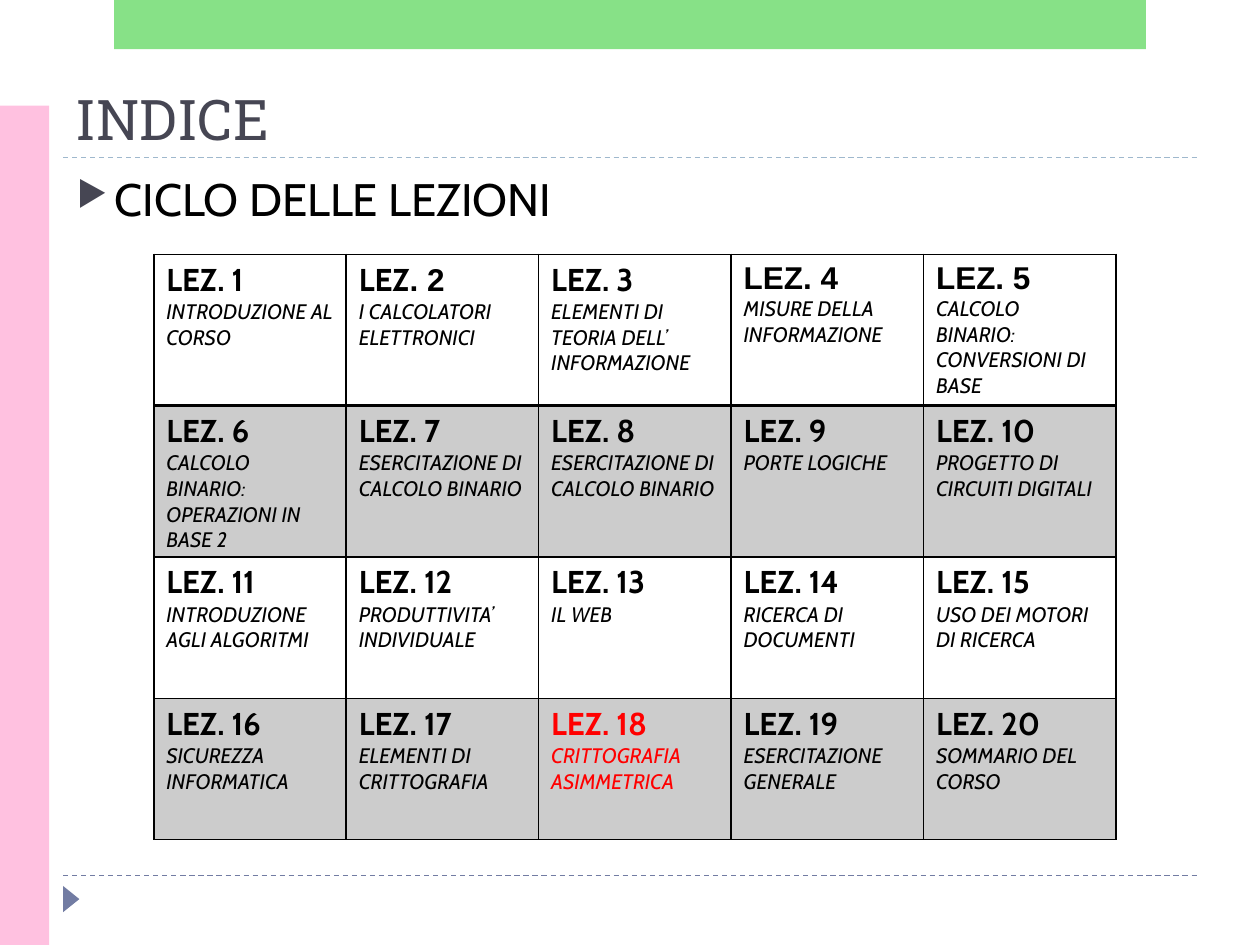
from lxml import etree
from pptx import Presentation
from pptx.dml.color import RGBColor
from pptx.enum import dml, shapes, text
from pptx.oxml import ns
from pptx.util import Cm, Pt

HUES = {
    "green": "62D862", "pink": "FFC1E0", "slate": "727CA3", "mist": "9FB8CD",
    "ink": "464653", "black": "000000", "red": "FF0000",
}
BODY, HEAD, PLAIN = "Cabin", "Roboto Slab", "Arial"
COLS, NOW = 5, 18
TOPICS = [
    "INTRODUZIONE AL CORSO",
    "I CALCOLATORI \vELETTRONICI",
    "ELEMENTI DI TEORIA DELL’\vINFORMAZIONE",
    "MISURE DELLA INFORMAZIONE",
    "CALCOLO BINARIO: CONVERSIONI DI BASE",
    "CALCOLO BINARIO: OPERAZIONI IN BASE 2",
    "ESERCITAZIONE DI CALCOLO BINARIO",
    "ESERCITAZIONE DI CALCOLO BINARIO",
    "PORTE LOGICHE",
    "PROGETTO DI CIRCUITI DIGITALI",
    "INTRODUZIONE AGLI ALGORITMI",
    "PRODUTTIVITA’ INDIVIDUALE",
    "IL WEB",
    "RICERCA DI DOCUMENTI",
    "USO DEI MOTORI DI RICERCA",
    "SICUREZZA INFORMATICA",
    "ELEMENTI DI CRITTOGRAFIA",
    "CRITTOGRAFIA ASIMMETRICA",
    "ESERCITAZIONE GENERALE",
    "SOMMARIO DEL CORSO",
]


def rgb(hue):
    return RGBColor.from_string(HUES[hue])


def add(node, tag, **attrs):
    return etree.SubElement(node, ns.qn(tag), attrs)


def paint(fill, props, hue, alpha=100):
    """Fill solidly; props is the XML element that holds the fill."""
    fill.solid()
    fill.fore_color.rgb = rgb(hue)
    if alpha < 100:
        tint = props.find(ns.qn("a:solidFill"))[0]
        add(tint, "a:alpha", val=str(alpha * 1000))


def style(para, size, face, hue, bold=False, slant=False):
    font = para.font
    font.size, font.name = Pt(size), face
    font.bold, font.italic = bold, slant
    font.color.rgb = rgb(hue)


def block(slide, kind, box, hue, alpha=100):
    shape = slide.shapes.add_shape(kind, *map(Cm, box))
    shape.shadow.inherit = False
    shape.line.fill.background()
    paint(shape.fill, shape._element.spPr, hue, alpha)
    return shape


def rule(slide, left, top, width, hue):
    line = slide.shapes.add_connector(
        shapes.MSO_CONNECTOR.STRAIGHT, Cm(left), Cm(top), Cm(left + width), Cm(top))
    line.line.color.rgb = rgb(hue)
    line.line.width = Pt(0.75)
    line.line.dash_style = dml.MSO_LINE.DASH
    add(line._element.spPr, "a:effectLst")


def frame(slide, left, top, width, height):
    """Colour bars, dashed rules and page marker within the slide box."""
    bar = shapes.MSO_SHAPE.RECTANGLE
    rule(slide, left + 1.27, top + height - 1.4, width - 2.54, "slate")
    rule(slide, left + 1.27, top + 3.18, width - 2.54, "mist")
    mark = block(slide, shapes.MSO_SHAPE.ISOSCELES_TRIANGLE,
                 (left + 1.17, top + height - 1.09, 0.53, 0.33), "slate")
    mark.rotation = 90
    block(slide, bar, (left, top + 2.13, 0.99, height - 2.13), "pink")
    block(slide, bar, (left + 2.3, top, 20.8, 0.99), "green", 76)


def title(slide, left, top, width, height):
    head = slide.shapes.title
    head.left, head.top, head.width, head.height = map(Cm, (left, top, width, height))
    body = head.text_frame
    body.text = "INDICE"
    body.vertical_anchor = text.MSO_ANCHOR.BOTTOM
    para = body.paragraphs[0]
    para.alignment = text.PP_ALIGN.LEFT
    style(para, 32, HEAD, "ink")


def topic(slide, left, top, width, height):
    body = slide.shapes.add_textbox(*map(Cm, (left, top, width, height))).text_frame
    body.word_wrap = True
    para = body.paragraphs[0]
    para.text = "CICLO DELLE LEZIONI"
    props = para._p.get_or_add_pPr()
    props.set("marL", str(Cm(0.76)))
    props.set("indent", str(-Cm(0.76)))
    add(add(props, "a:buClr"), "a:srgbClr", val=HUES["ink"])
    add(props, "a:buSzPct", val="76000")
    add(props, "a:buChar", char="▶")
    style(para, 26, BODY, "black")


def edge(cell, first, second):
    """Draw the cell's borders; only the rule below the first row is thicker."""
    props = cell._tc.get_or_add_tcPr()
    sides = {"L": 1, "R": 1, "T": 2 if second else 1, "B": 2 if first else 1}
    for spot, (side, size) in enumerate(sides.items()):
        line = add(props, "a:ln" + side, w=str(Pt(size)))
        add(add(line, "a:solidFill"), "a:srgbClr", val=HUES["black"])
        props.insert(spot, line)


def lesson(cell, num, name):
    hue = "red" if num == NOW else "black"
    body = cell.text_frame
    head, note = body.paragraphs[0], body.add_paragraph()
    if num == 2:
        for part, face in (("LEZ", BODY), (". 2", PLAIN)):
            run = head.add_run()
            run.text, run.font.name = part, face
    else:
        head.text = f"LEZ. {num}"
    style(head, 18, PLAIN if num in (4, 5) else BODY, hue, bold=True)
    note.text = name
    style(note, 12, BODY, hue, slant=True)


def plan(slide, left, top, width, height):
    """Grid of lessons, with every other row shaded."""
    rows = len(TOPICS) // COLS
    grid = slide.shapes.add_table(rows, COLS, *map(Cm, (left, top, width, height))).table
    grid.first_row = grid.horz_banding = False
    for num, name in enumerate(TOPICS, 1):
        row, col = divmod(num - 1, COLS)
        cell = grid.cell(row, col)
        lesson(cell, num, name)
        if row % 2:
            paint(cell.fill, cell._tc.get_or_add_tcPr(), "black", 20)
        else:
            cell.fill.background()
        edge(cell, row == 0, row == 1)


def main():
    deck = Presentation()
    deck.slide_width, deck.slide_height = Cm(25.4), Cm(19.05)
    slide = deck.slides.add_slide(deck.slide_layouts[5])
    frame(slide, 0, 0, 25.4, 19.05)
    title(slide, 1.27, 1.4, 22.86, 1.78)
    topic(slide, 1.3, 3.33, 22.86, 2)
    plan(slide, 3.1, 5.13, 19.4, 11.4)
    deck.save("out.pptx")


if __name__ == "__main__":
    main()
